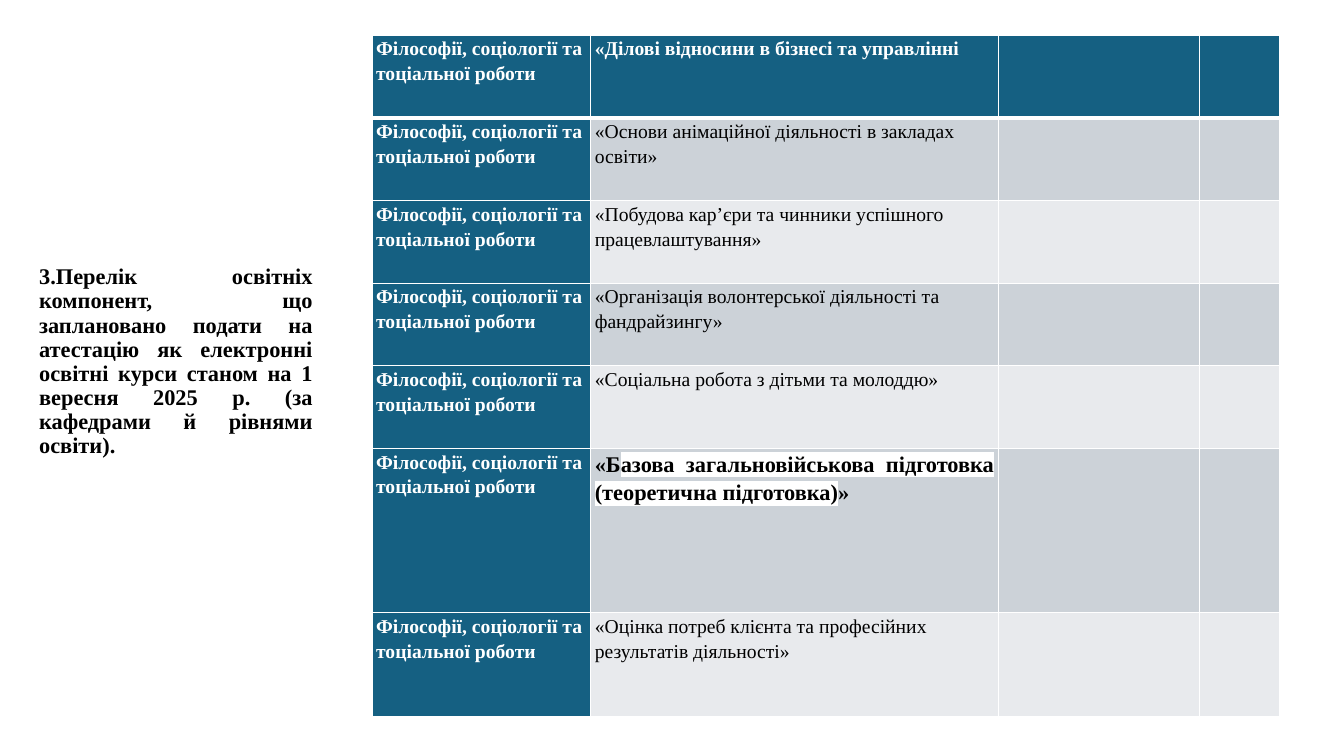
from lxml import etree
from pptx import Presentation, util as u
from pptx.dml.color import RGBColor
from pptx.enum import text
from pptx.oxml import ns

WIDTH, HEIGHT = 13.33, 7.5
FONT = "Times New Roman"
TEAL, GREY, PALE, WHITE, BLACK = "156082", "CCD2D8", "E8EAED", "FFFFFF", "000000"
HEADING = ("3.Перелік освітніх компонент, що заплановано подати на атестацію "
           "як електронні освітні курси станом на 1 вересня 2025 р. "
           "(за кафедрами й рівнями освіти).")
DEPARTMENT = "Філософії, соціології та тоціальної роботи"
MILITARY = ("«Б", "азова загальновійськова підготовка (теоретична підготовка)", "»")
COURSES = [
    ("«Ділові відносини в бізнесі та управлінні",),
    ("«Основи анімаційної діяльності в закладах освіти»",),
    ("«Побудова кар’єри та чинники успішного працевлаштування»",),
    ("«Організація волонтерської діяльності та фандрайзингу»",),
    ("«Соціальна робота з дітьми та молоддю»",),
    MILITARY,
    ("«Оцінка потреб клієнта та професійних результатів діяльності»",),
]
COLUMNS = [2.17, 4.04, 2, 0.79]
ROWS = [0.82] * 5 + [1.63, 1.03]


def color(code):
    return RGBColor.from_string(code)


def add_solid(parent, tag, code):
    element = etree.SubElement(parent, ns.qn(tag))
    etree.SubElement(element, ns.qn("a:srgbClr")).set("val", code)
    return element


def write(paragraph, parts, size, ink, bold, spacing, justified=False):
    paragraph.line_spacing = spacing
    paragraph.space_after = u.Pt(8)
    if justified:
        paragraph.alignment = text.PP_ALIGN.JUSTIFY
    for part in parts:
        run = paragraph.add_run()
        run.text = part
        run.font.name, run.font.size, run.font.bold = FONT, u.Pt(size), bold
        run.font.color.rgb = color(ink)


def highlight(run, code):
    properties = run.font._element
    marker = add_solid(properties, "a:highlight", code)
    properties.find(ns.qn("a:solidFill")).addnext(marker)


def paint_cell(cell, background, top, bottom):
    cell.fill.solid()
    cell.fill.fore_color.rgb = color(background)
    cell.margin_left = cell.margin_right = u.Inches(0.04)
    cell.margin_top = cell.margin_bottom = 0
    properties = cell._tc.get_or_add_tcPr()
    edges = [("a:lnL", 1), ("a:lnR", 1), ("a:lnT", top), ("a:lnB", bottom)]
    for position, (tag, points) in enumerate(edges):
        edge = etree.Element(ns.qn(tag), w=str(u.Pt(points)))
        add_solid(edge, "a:solidFill", WHITE).tag
        fill = edge[0]
        properties.insert(position, edge)


def add_heading(slide, left, top, width, height):
    heading = slide.shapes.add_textbox(*map(u.Inches, (left, top, width, height)))
    frame = heading.text_frame
    frame.word_wrap = True
    frame.vertical_anchor = text.MSO_ANCHOR.BOTTOM
    write(frame.paragraphs[0], [HEADING], 16, BLACK, True, 0.9, True)


def add_courses(slide, left, top, width, height):
    courses = slide.shapes.add_table(
        len(ROWS), len(COLUMNS), *map(u.Inches, (left, top, width, height))).table
    for column, share in zip(courses.columns, COLUMNS):
        column.width = u.Inches(width * share / sum(COLUMNS))
    for row, share in zip(courses.rows, ROWS):
        row.height = u.Inches(height * share / sum(ROWS))

    for index, course in enumerate(COURSES):
        header, military = index == 0, course is MILITARY
        band = TEAL if header else GREY if index % 2 else PALE
        cells = courses.rows[index].cells
        for number, cell in enumerate(cells):
            paint_cell(cell, band if number else TEAL,
                       3 if index == 1 else 1, 3 if header else 1)
        write(cells[0].text_frame.paragraphs[0], [DEPARTMENT], 14, WHITE, True, 1.15)
        title = cells[1].text_frame.paragraphs[0]
        write(title, course, 16 if military else 14, WHITE if header else BLACK,
              header or military, 1.15, military)
        if military:
            highlight(title.runs[1], WHITE)


def main():
    deck = Presentation()
    deck.slide_width, deck.slide_height = u.Inches(WIDTH), u.Inches(HEIGHT)
    slide = deck.slides.add_slide(deck.slide_layouts[6])
    add_heading(slide, 0.29, 2.09, 2.91, 2.51)
    add_courses(slide, 3.69, 0.35, sum(COLUMNS), sum(ROWS))
    deck.save("out.pptx")


if __name__ == "__main__":
    main()
